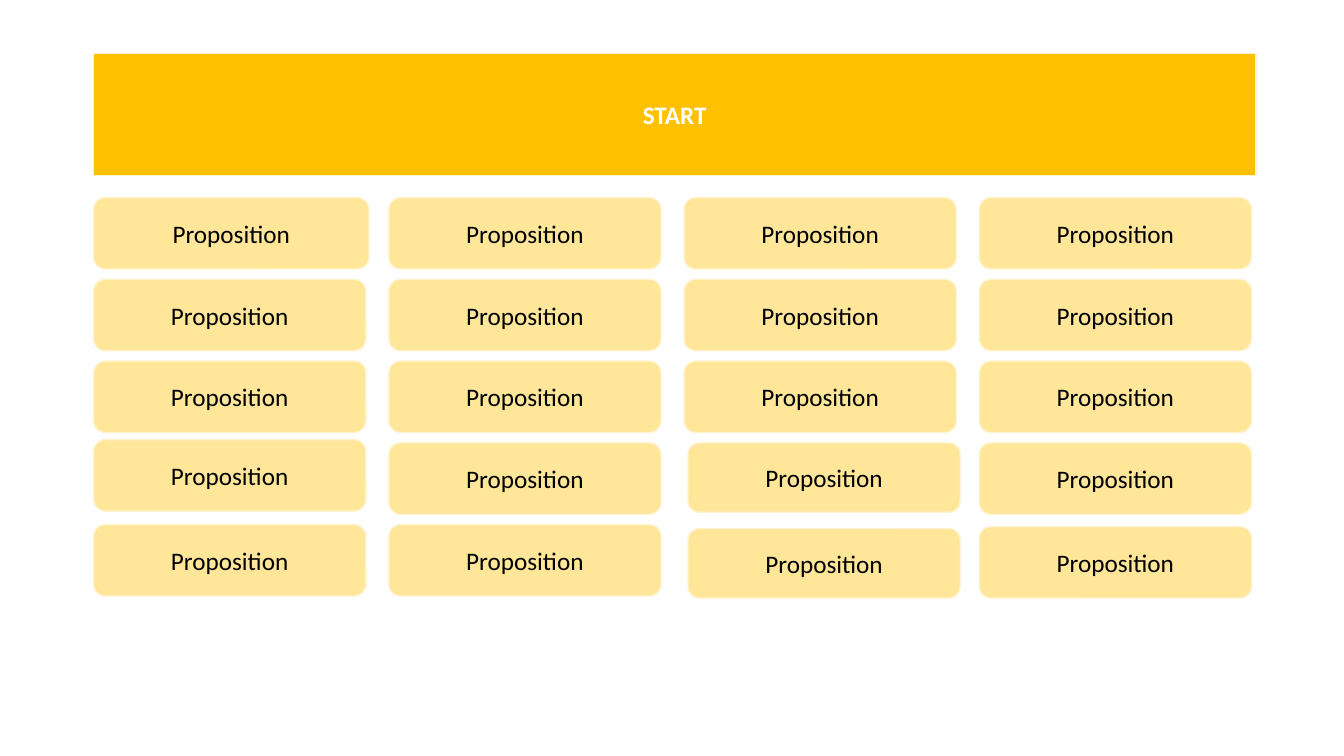
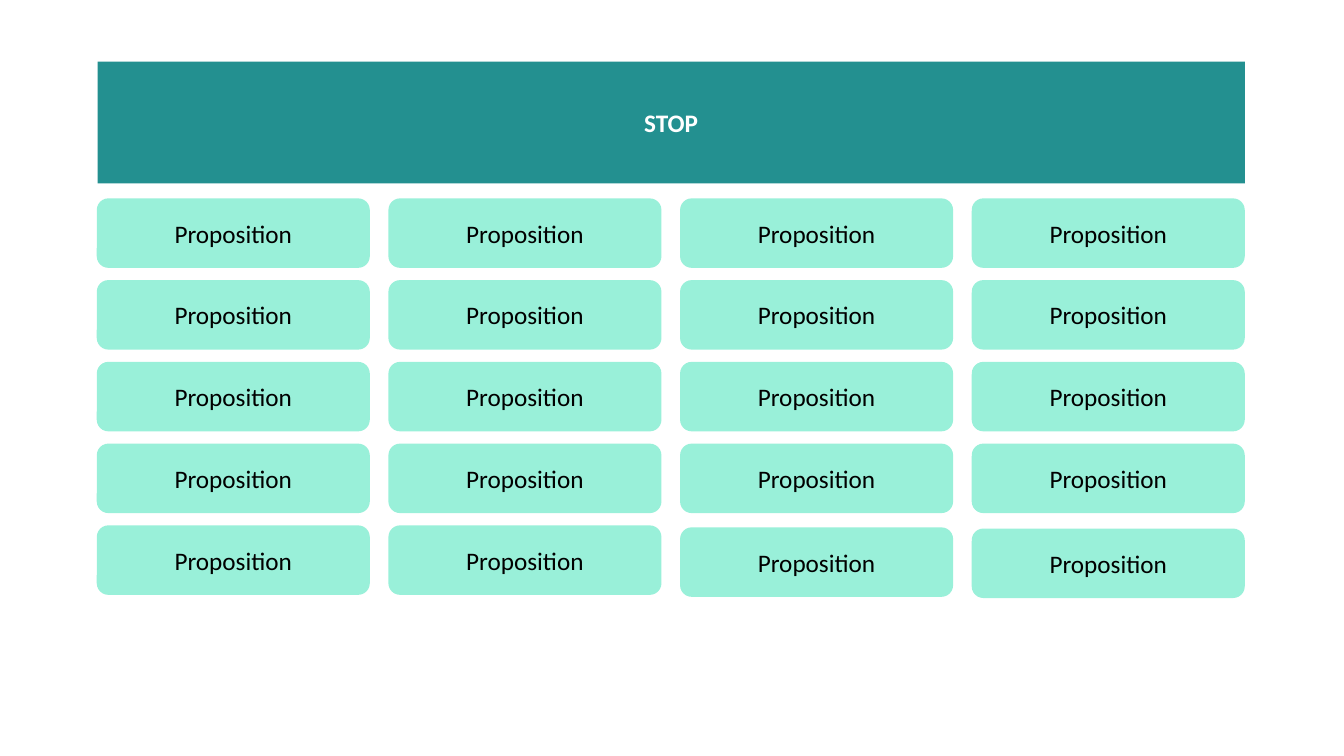
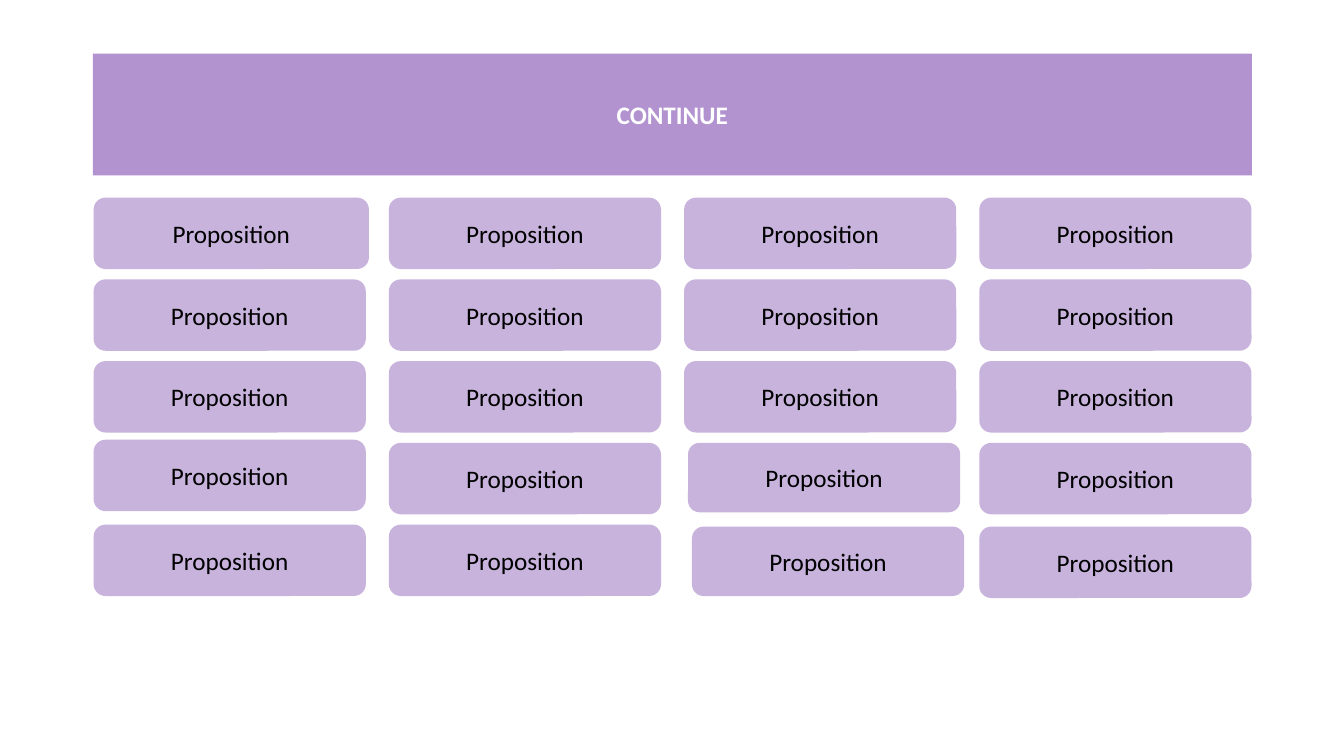
from itertools import product

from lxml.etree import SubElement as SubEl
from pptx import Presentation as Deck
from pptx.dml.color import RGBColor as Rgb
from pptx.enum.shapes import MSO_SHAPE as Kind
from pptx.enum.text import MSO_ANCHOR as Anchor, MSO_AUTO_SIZE as Fit, PP_ALIGN as Align
from pptx.oxml.ns import qn
from pptx.util import Cm, Pt

# Colours
WHITE = Rgb(0xFF, 0xFF, 0xFF)
BLACK = Rgb(0x00, 0x00, 0x00)
AMBER = Rgb(0xFF, 0xC0, 0x00)
SAND = Rgb(0xFF, 0xE6, 0x99)
CREAM = Rgb(0xFF, 0xF2, 0xCC)
TEAL = Rgb(0x16, 0x8A, 0x8A)
MINT = Rgb(0x99, 0xF0, 0xD9)
LILAC = Rgb(0xB2, 0x93, 0xCF)

# Shared text styles and grid size
BASE = {"name": "Calibri", "size": Pt(18)}
HEAD = {**BASE, "bold": True}
BODY = {**BASE, "bold": False}
COLS, ROWS = 4, 5

# Small shifts of single cells, (column, row): (dx, dy, dw, dh) in cm
SHIFT = {(0, 0): (0, 0, 0.08, 0), (0, 3): (0, -0.08, 0, 0),
         (2, 3): (0.1, 0, 0, -0.05), (3, 4): (0, 0.05, 0, 0)}

# Boxes are (left, top, width, height) in cm; a fill is (colour, opacity in %)
BOARDS = [
    {"name": "START", "band": (2.36, 1.35, 29.29, 3.07), "head": (AMBER, 100),
     "grid": (2.36, 4.98, 29.18, 10.04), "cell": (6.86, 1.8),
     "tint": (SAND, 100), "edge": CREAM,
     "shift": {**SHIFT, (2, 4): (0.1, 0.1, 0, -0.05)}},
    {"name": "STOP", "band": (2.46, 1.55, 28.91, 3.07), "head": (TEAL, 94),
     "grid": (2.44, 5, 28.93, 9.99), "cell": (6.88, 1.75),
     "tint": (MINT, 100), "edge": None,
     "shift": {(2, 4): (0, 0.05, 0, 0), (3, 4): (0, 0.08, 0, 0)}},
    {"name": "CONTINUE", "band": (2.34, 1.35, 29.21, 3.07), "head": (LILAC, 100),
     "grid": (2.36, 4.98, 29.18, 10.04), "cell": (6.86, 1.8),
     "tint": (LILAC, 70), "edge": None,
     "shift": {**SHIFT, (2, 4): (0.2, 0.05, 0, -0.05)}},
]


def paint(shape, tint, edge):
    """Fill the shape and draw or hide its outline."""
    color, alpha = tint
    shape.fill.solid()
    shape.fill.fore_color.rgb = color
    if alpha < 100:
        node = shape.element.spPr.find(qn("a:solidFill"))[0]
        SubEl(node, qn("a:alpha"), val=str(alpha * 1000))
    if edge is None:
        shape.line.fill.background()
    else:
        shape.line.color.rgb = edge
        shape.line.width = Pt(1)


def write(shape, text, style, color):
    """Set centred text in the given style."""
    frame = shape.text_frame
    frame.text = text
    frame.word_wrap = True
    frame.auto_size = Fit.NONE
    frame.vertical_anchor = Anchor.MIDDLE
    para = frame.paragraphs[0]
    para.alignment = Align.CENTER
    font = para.runs[0].font
    for key, value in style.items():
        setattr(font, key, value)
    font.color.rgb = color


def add_band(slide, box, text, tint, edge):
    """Turn the title placeholder into the rounded heading band."""
    title = slide.shapes.title
    for key, value in zip(("left", "top", "width", "height"), box):
        setattr(title, key, Cm(value))
    form = SubEl(title.element.spPr, qn("a:prstGeom"), prst="roundRect")
    SubEl(form, qn("a:avLst"))
    paint(title, tint, edge)
    write(title, text, HEAD, WHITE)


def add_grid(slide, box, size, tint, edge, shift):
    """Spread the proposition cells evenly over the box."""
    left, top, width, height = box
    wide, high = size
    step_x = (width - wide) / (COLS - 1)
    step_y = (height - high) / (ROWS - 1)
    for col, row in product(range(COLS), range(ROWS)):
        spot = (left + col * step_x, top + row * step_y, wide, high)
        move = shift.get((col, row), (0, 0, 0, 0))
        place = [Cm(a + b) for a, b in zip(spot, move)]
        cell = slide.shapes.add_shape(Kind.ROUNDED_RECTANGLE, *place)
        cell.shadow.inherit = False
        paint(cell, tint, edge)
        write(cell, "Proposition", BODY, BLACK)


def add_board(deck, board):
    """Build one slide: heading band above a grid of cells."""
    slide = deck.slides.add_slide(deck.slide_layouts[5])
    edge = board["edge"]
    add_band(slide, board["band"], board["name"], board["head"], edge)
    add_grid(slide, board["grid"], board["cell"], board["tint"], edge, board["shift"])


def main():
    deck = Deck()
    deck.slide_width, deck.slide_height = Cm(33.87), Cm(19.05)
    for board in BOARDS:
        add_board(deck, board)
    deck.save("out.pptx")


if __name__ == "__main__":
    main()
